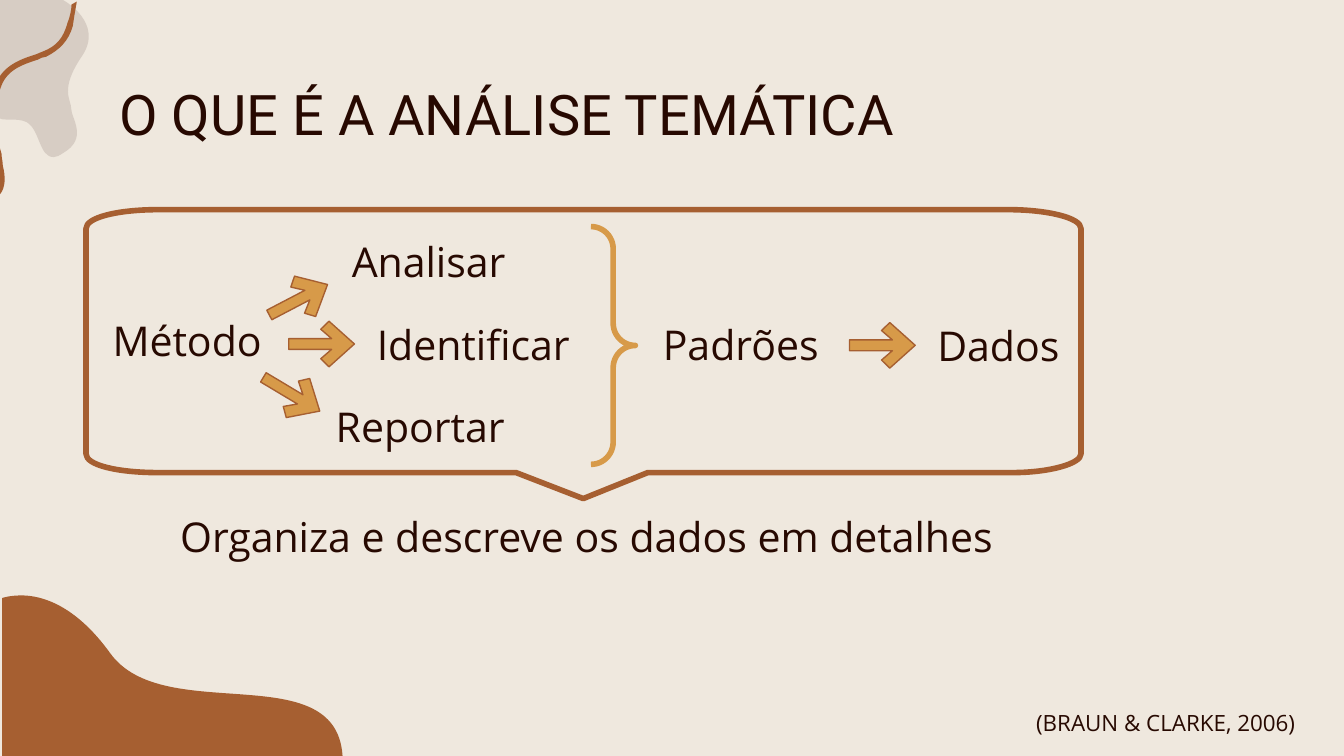
from math import cos, radians, sin

from lxml.etree import SubElement
from pptx import Presentation
from pptx.dml.color import RGBColor
from pptx.enum.shapes import MSO_SHAPE
from pptx.enum.text import MSO_ANCHOR
from pptx.oxml.ns import qn
from pptx.util import Pt

THEME = {
    "background": "EFE8DE", "sand": "D7CDC4", "rust": "A65F31",
    "ochre": "D79A49", "ink": "270901",
    "title_font": "Roboto", "body_font": "Open Sans",
    "title_size": 30, "body_size": 22, "citation_size": 12,
    "thin": 0.75, "thick": 3,
}

# Texts: wording, left, top, width, height
TITLE = ("O QUE É A ANÁLISE TEMÁTICA", 57, 34.4, 583, 52)
CITATION = ("(BRAUN & CLARKE, 2006)", 548, 372.6, 172, 32)
LABEL_HEIGHT = 40
LABELS = [  # wording, left, top, width
    ("Método", 53.2, 162, 107),
    ("Analisar", 181.4, 119.9, 107),
    ("Identificar", 194.8, 164.4, 132),
    ("Reportar", 172.8, 208, 124),
    ("Padrões", 348, 164.4, 107),
    ("Dados", 495, 164.7, 132),
    ("Organiza e descreve os dados em detalhes", 89.4, 267, 583),
]

# Arrows: centre x, centre y, rotation
ARROWS = [(159.9, 160.6, -27.6), (156.2, 211.2, 30.9),
          (172.3, 184.3, 0), (472.7, 185, 0)]
ARROW_OUTLINE = [(4, -12.2), (-0.4, -7.9), (5.4, -2.9), (-17.6, -2.9),
                 (-17.6, 2.9), (5.4, 2.9), (-0.4, 7.9), (4, 12.2), (17.6, 0),
                 (4, -12.2)]

# Outlines: pairs are corners, sixes are cubic curves (two controls and an end)
CORNER_WAVE = [
    (11.5, 319), (5, 319, 1.2, 320.4, 1.2, 320.4), (1.2, 407.5), (183.6, 407.5),
    (182.9, 349.9, 87.8, 390.2, 59, 349.9), (40.3, 324, 22.3, 319, 11.5, 319),
]
SAND_BLOB = [
    (33.8, 0), (33.8, 0, 56.2, 12.2, 43.9, 30.2),
    (31.7, 48.2, 38.2, 53.3, 38.2, 58.3), (38.2, 63.4, 47.5, 74.2, 33.8, 82.1),
    (31.7, 83.5, 30.2, 84.2, 28.8, 84.2), (20.9, 84.2, 21.6, 69.8, 14.4, 65.5),
    (11.5, 64.1, 8.6, 64.1, 5.8, 64.1), (5, 64.1, 4.3, 64.1, 3.6, 64.1),
    (0, 64.1, -2.2, 63.4, -4.3, 58.3), (-5.8, 54.7, -8.6, 54, -13, 54),
    (-15.1, 54, -17.3, 54, -19.4, 54), (-25.9, 54, -33.8, 53.3, -38.2, 43.2),
    (-38.2, 0), (33.8, 0),
]
RIBBON_TURN = 248.7
RIBBON_CENTER = (11.2, 56.5)
RIBBON = [
    (-20.2, 106.6), (-17.3, 106.6, -14.4, 105.8, -12.2, 105.1), (-11.5, 105.1),
    (-7.9, 104.4, -3.6, 103.7, -1.4, 100.8), (0.7, 97.9, 0, 91.4, -0.7, 88.6),
    (-1.4, 85.7, -1.4, 83.5, -2.2, 81.4), (-2.9, 77, -3.6, 72.7, -4.3, 68.4),
    (-5, 60.5, -5, 52.6, -2.9, 45.4), (0.7, 34.6, 10.1, 31, 19.4, 28.1),
    (20.2, 27.4, 21.6, 27.4, 23, 26.6), (30.2, 23.8, 33.8, 19.4, 36, 11.5),
    (37.4, 7.9, 38.2, 4.3, 38.2, 1.4), (41, 0),
    (40.3, 4.3, 39.6, 7.9, 38.9, 13), (36.7, 20.9, 31.7, 25.9, 24.5, 29.5),
    (23, 29.5, 21.6, 30.2, 20.2, 31), (11.5, 33.8, 2.9, 36.7, 0, 46.8),
    (-2.9, 53.3, -2.2, 61.2, -1.4, 68.4), (-1.4, 72.7, -0.7, 77, 0.7, 81.4),
    (0.7, 83.5, 1.4, 85.7, 1.4, 87.8), (2.9, 93.6, 2.9, 99.4, 0, 103),
    (-2.2, 105.8, -7.2, 107.3, -10.8, 108), (-11.5, 108),
    (-13.7, 108.7, -16.6, 108.7, -18.7, 109.4),
]
SPEECH_FRAME = [
    (85, 112.3), (62.6, 112.3, 46.1, 116.6, 46.1, 122.4), (46.1, 243.2),
    (46.1, 249.1, 62.6, 253.2, 85, 253.2), (276.5, 253.2), (312.5, 267.1),
    (347, 253.2), (540, 253.2), (540.7, 253.2, 541.4, 253.2, 542.2, 253.2),
    (562.3, 253.2, 579.1, 248.4, 579.1, 243.2),
    (579.1, 122.4), (579.1, 116.6, 560.9, 112.3, 540, 112.3),
]


def color(name):
    return RGBColor.from_string(THEME[name])


def pairs(piece):
    return list(zip(piece[::2], piece[1::2]))


def turn(point, center, degrees):
    angle = radians(degrees)
    dx, dy = point[0] - center[0], point[1] - center[1]
    return (center[0] + dx * cos(angle) - dy * sin(angle),
            center[1] + dx * sin(angle) + dy * cos(angle))


def paint(shape, fill=None, line=None, width=0):
    shape.shadow.inherit = False
    if fill:
        shape.fill.solid()
        shape.fill.fore_color.rgb = color(fill)
    else:
        shape.fill.background()
    if line:
        shape.line.color.rgb = color(line)
        shape.line.width = Pt(width)
    else:
        shape.line.fill.background()


def add_outline(slide, outline, rotation=0, **style):
    points = [(Pt(x), Pt(y)) for piece in outline for x, y in pairs(piece)]
    builder = slide.shapes.build_freeform(*points[0])
    builder.add_line_segments(points[1:], close=True)
    shape = builder.convert_to_shape()
    # Join each three points of a curve into one cubic segment
    segments = iter(list(shape.element.iter(qn("a:lnTo"))))
    for piece in outline[1:]:
        first = next(segments)
        if len(piece) == 6:
            curve = SubElement(first.getparent(), qn("a:cubicBezTo"))
            first.addprevious(curve)
            for segment in (first, next(segments), next(segments)):
                curve.append(segment[0])
                segment.getparent().remove(segment)
    shape.rotation = rotation
    paint(shape, **style)


def add_text(slide, text, left, top, width, height, font="body_font",
             size="body_size", anchor=MSO_ANCHOR.MIDDLE):
    box = slide.shapes.add_textbox(Pt(left), Pt(top), Pt(width), Pt(height))
    frame = box.text_frame
    frame.word_wrap = True
    frame.vertical_anchor = anchor
    frame.margin_left = frame.margin_right = Pt(7.2)
    frame.margin_top = frame.margin_bottom = Pt(7.2)
    paragraph = frame.paragraphs[0]
    paragraph.text = text
    paragraph.font.name = THEME[font]
    paragraph.font.size = Pt(THEME[size])
    paragraph.font.color.rgb = color("ink")


def main():
    presentation = Presentation()
    presentation.slide_width, presentation.slide_height = Pt(720), Pt(405)
    slide = presentation.slides.add_slide(presentation.slide_layouts[6])
    slide.background.fill.solid()
    slide.background.fill.fore_color.rgb = color("background")

    # Corner decoration
    add_outline(slide, CORNER_WAVE, fill="rust")
    add_outline(slide, SAND_BLOB, fill="sand")
    upright_ribbon = [
        [value for point in pairs(piece)
         for value in turn(point, RIBBON_CENTER, -RIBBON_TURN)]
        for piece in RIBBON
    ]
    add_outline(slide, upright_ribbon, rotation=RIBBON_TURN, fill="rust")

    # Title
    add_text(slide, *TITLE, font="title_font", size="title_size")

    # Diagram: arrows, brace, frame and labels
    for x, y, angle in ARROWS:
        outline = [(x + dx, y + dy) for dx, dy in ARROW_OUTLINE]
        add_outline(slide, outline, rotation=angle, fill="ochre", line="rust",
                    width=THEME["thin"])
    brace = slide.shapes.add_shape(MSO_SHAPE.RIGHT_BRACE, Pt(316.6), Pt(121.4),
                                   Pt(23.8), Pt(127.4))
    brace.adjustments[0] = brace.adjustments[1] = 0.5
    paint(brace, line="ochre", width=THEME["thick"])
    add_outline(slide, SPEECH_FRAME, line="rust", width=THEME["thick"])
    for text, left, top, width in LABELS:
        add_text(slide, text, left, top, width, LABEL_HEIGHT)

    # Citation
    add_text(slide, *CITATION, size="citation_size", anchor=MSO_ANCHOR.TOP)

    presentation.save("out.pptx")


if __name__ == "__main__":
    main()
